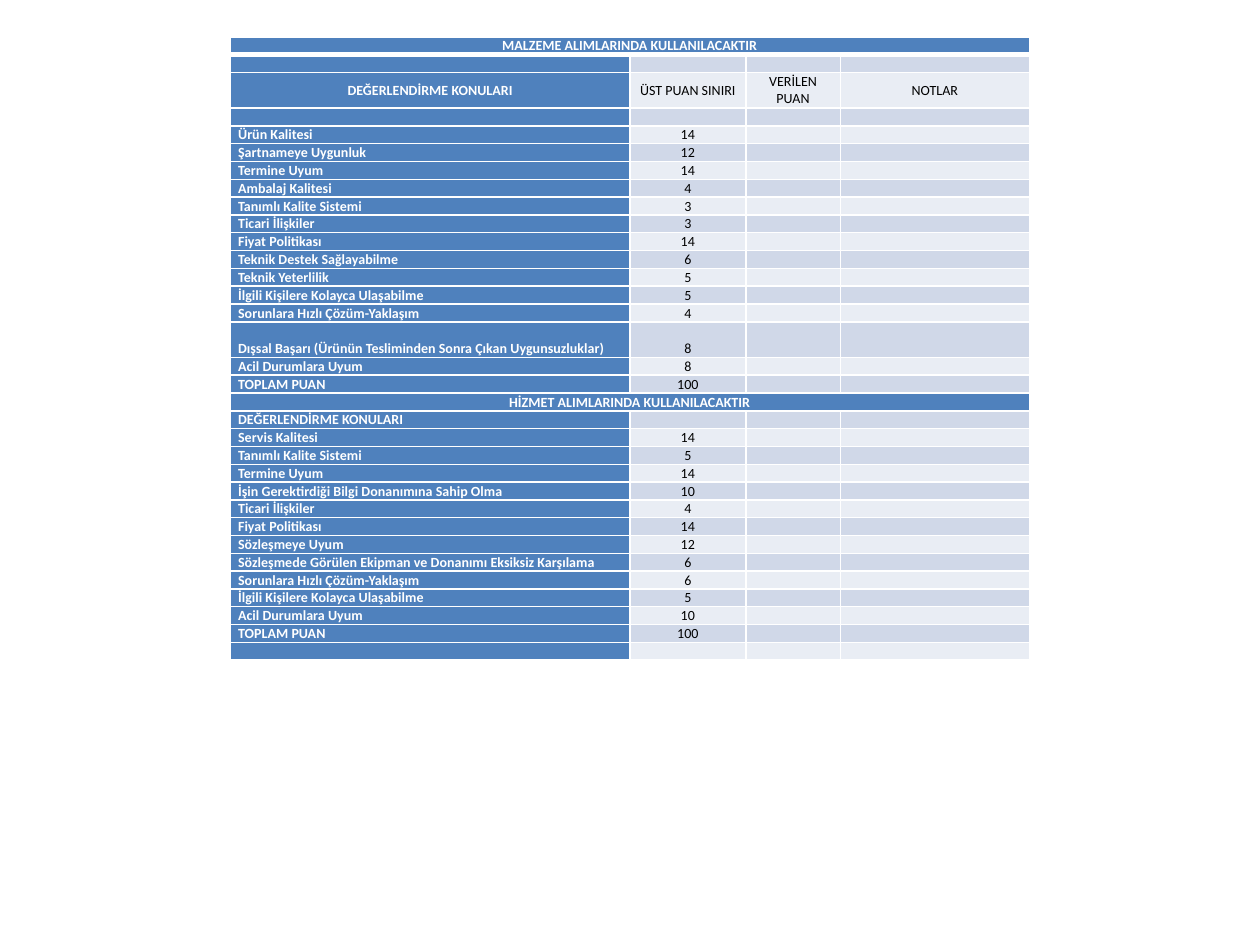
from dataclasses import dataclass

from lxml.etree import SubElement
from pptx import Presentation
from pptx.dml.color import RGBColor
from pptx.enum.text import MSO_ANCHOR, PP_ALIGN
from pptx.oxml.ns import qn
from pptx.util import Inches, Pt


@dataclass(frozen=True)
class Theme:
    font: str = "Calibri"
    size: float = 8
    accent: str = "4F81BD"
    band_dark: str = "D0D8E8"
    band_light: str = "E9EDF4"
    light: str = "FFFFFF"
    dark: str = "000000"
    rule: float = 1
    title_rule: float = 3


THEME = Theme()
SLIDE_WIDTH, SLIDE_HEIGHT = Inches(10), Inches(7.5)
COLUMN_SHARES = (0.317, 0.092, 0.075, 0.15)  # of the slide's width
LEFT_SHARE, TOP_SHARE, HEIGHT_SHARE = 0.183, 0.039, 0.66

MATERIAL_TITLE = "MALZEME ALIMLARINDA KULLANILACAKTIR"
SERVICE_TITLE = "HİZMET ALIMLARINDA KULLANILACAKTIR"
TOPICS = "DEĞERLENDİRME KONULARI"
HEADINGS = (TOPICS, "ÜST PUAN SINIRI", "VERİLEN PUAN", "NOTLAR")
EXTERNAL_SUCCESS = "Dışsal Başarı (Ürünün Tesliminden Sonra Çıkan Uygunsuzluklar)"

MATERIAL_SCORES = (
    ("Ürün Kalitesi", 14),
    ("Şartnameye Uygunluk", 12),
    ("Termine Uyum", 14),
    ("Ambalaj Kalitesi", 4),
    ("Tanımlı Kalite Sistemi", 3),
    ("Ticari İlişkiler", 3),
    ("Fiyat Politikası", 14),
    ("Teknik Destek Sağlayabilme", 6),
    ("Teknik Yeterlilik", 5),
    ("İlgili Kişilere Kolayca Ulaşabilme", 5),
    ("Sorunlara Hızlı Çözüm-Yaklaşım", 4),
    (EXTERNAL_SUCCESS, 8),
    ("Acil Durumlara Uyum", 8),
    ("TOPLAM PUAN", 100),
)
SERVICE_SCORES = (
    ("Servis Kalitesi", 14),
    ("Tanımlı Kalite Sistemi", 5),
    ("Termine Uyum", 14),
    ("İşin Gerektirdiği Bilgi Donanımına Sahip Olma", 10),
    ("Ticari İlişkiler", 4),
    ("Fiyat Politikası", 14),
    ("Sözleşmeye Uyum", 12),
    ("Sözleşmede Görülen Ekipman ve Donanımı Eksiksiz Karşılama", 6),
    ("Sorunlara Hızlı Çözüm-Yaklaşım", 6),
    ("İlgili Kişilere Kolayca Ulaşabilme", 5),
    ("Acil Durumlara Uyum", 10),
    ("TOPLAM PUAN", 100),
)
BLANK = ()
FORM_ROWS = (
    (MATERIAL_TITLE,), BLANK, HEADINGS, BLANK, *MATERIAL_SCORES,
    (SERVICE_TITLE,), (TOPICS,), *SERVICE_SCORES, BLANK,
)


def write_text(cell, text, *, color, bold=False, align=PP_ALIGN.LEFT,
               anchor=MSO_ANCHOR.BOTTOM):
    cell.margin_left = cell.margin_right = Inches(0.06)
    cell.margin_top = cell.margin_bottom = 0
    cell.vertical_anchor = anchor
    paragraph = cell.text_frame.paragraphs[0]
    paragraph.alignment = align
    if not text:
        # An empty cell keeps the small type size, so its row stays low
        SubElement(paragraph._p, qn("a:endParaRPr"), sz=str(int(THEME.size * 100)))
        return
    run = paragraph.add_run()
    run.text = text
    run.font.name, run.font.size, run.font.bold = THEME.font, Pt(THEME.size), bold
    run.font.color.rgb = RGBColor.from_string(color)


def paint_cell(cell, color, *, top=THEME.rule, bottom=THEME.rule):
    properties = cell._tc.get_or_add_tcPr()
    widths = {"L": THEME.rule, "R": THEME.rule, "T": top, "B": bottom}
    for side, width in widths.items():
        line = SubElement(properties, qn(f"a:ln{side}"), w=str(Pt(width)))
        fill = SubElement(line, qn("a:solidFill"))
        SubElement(fill, qn("a:srgbClr"), val=THEME.light)
    cell.fill.solid()
    cell.fill.fore_color.rgb = RGBColor.from_string(color)


def fill_row(table, index, values):
    is_title = values in ((MATERIAL_TITLE,), (SERVICE_TITLE,))
    is_heading = values == HEADINGS
    band = THEME.band_dark if index % 2 else THEME.band_light
    if is_title:
        table.cell(index, 0).merge(table.cell(index, len(COLUMN_SHARES) - 1))

    if is_heading:
        anchor = MSO_ANCHOR.MIDDLE
    else:
        anchor = MSO_ANCHOR.BOTTOM if index else MSO_ANCHOR.TOP

    for column in range(len(COLUMN_SHARES)):
        cell = table.cell(index, column)
        is_label = column == 0
        text = str(values[column]) if column < len(values) else ""
        paint_cell(cell, THEME.accent if is_label or is_title else band,
                   top=THEME.title_rule if index == 1 else THEME.rule,
                   bottom=THEME.title_rule if index == 0 else THEME.rule)
        centred = is_title or is_heading or not is_label
        write_text(cell, text, bold=is_label, anchor=anchor,
                   color=THEME.light if is_label else THEME.dark,
                   align=PP_ALIGN.CENTER if centred else PP_ALIGN.LEFT)


def add_score_table(slide):
    height = int(SLIDE_HEIGHT * HEIGHT_SHARE)
    table = slide.shapes.add_table(
        len(FORM_ROWS), len(COLUMN_SHARES),
        int(SLIDE_WIDTH * LEFT_SHARE), int(SLIDE_HEIGHT * TOP_SHARE),
        int(SLIDE_WIDTH * sum(COLUMN_SHARES)), height).table
    table.first_row = table.horz_banding = False
    for column, share in zip(table.columns, COLUMN_SHARES):
        column.width = int(SLIDE_WIDTH * share)

    # The headings and the longest topic take two lines, all others one
    lines = [2 if values == HEADINGS or EXTERNAL_SUCCESS in values else 1
             for values in FORM_ROWS]
    for index, values in enumerate(FORM_ROWS):
        table.rows[index].height = height * lines[index] // sum(lines)
        fill_row(table, index, values)


def main():
    presentation = Presentation()
    presentation.slide_width, presentation.slide_height = SLIDE_WIDTH, SLIDE_HEIGHT
    blank_layout = presentation.slide_layouts[6]
    add_score_table(presentation.slides.add_slide(blank_layout))
    presentation.save("out.pptx")


if __name__ == "__main__":
    main()
